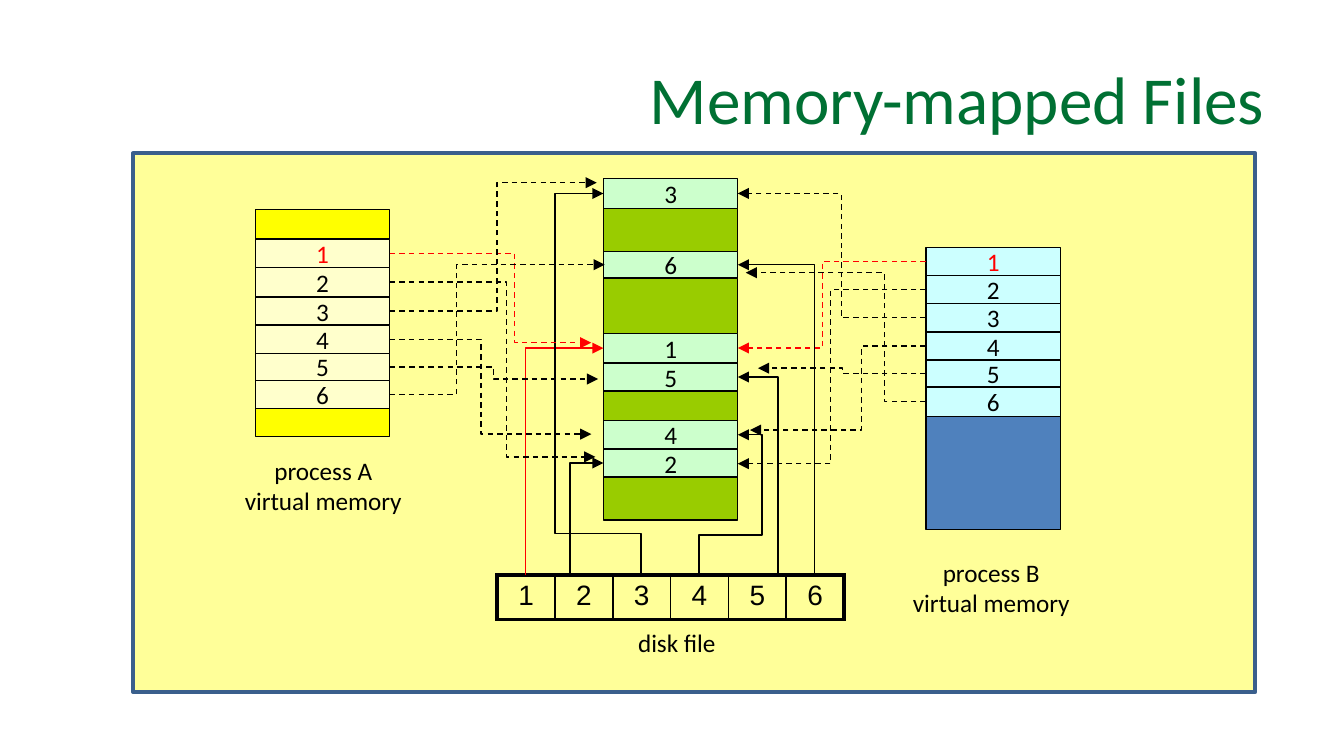
"""Build a slide on how two processes share a memory-mapped file."""
from pptx import Presentation
from pptx.dml.color import RGBColor
from pptx.enum.dml import MSO_LINE
from pptx.enum.shapes import MSO_CONNECTOR, MSO_SHAPE
from pptx.enum.text import MSO_ANCHOR, PP_ALIGN
from pptx.oxml.ns import qn
from pptx.util import Inches, Pt
from lxml.etree import SubElement

TITLE = "Memory-mapped Files"
HUES = {
    "title": "007033", "panel": "FFFF99", "edge": "3A5F8C", "ink": "000000",
    "red": "FF0000", "page_a": "FFFFCC", "rest_a": "FFFF00",
    "page_b": "CCFFFF", "rest_b": "4F81BD", "frame": "CCFFCC", "free": "99CC00",
}
WIDE = 1
STACKS = {
    "a": (1.9, 1.56, "page_a", "rest_a", [
        ("", 0.22), ("1", 0.21), ("2", 0.22), ("3", 0.21),
        ("4", 0.21), ("5", 0.2), ("6", 0.21), ("", 0.21)]),
    "b": (6.89, 1.84, "page_b", "rest_b", [
        ("1", 0.21), ("2", 0.21), ("3", 0.21), ("4", 0.21),
        ("5", 0.2), ("6", 0.22), ("", 0.84)]),
    "ram": (4.49, 1.33, "frame", "free", [
        ("3", 0.22), ("", 0.32), ("6", 0.2), ("", 0.41), ("1", 0.22), ("5", 0.21),
        ("", 0.22), ("4", 0.21), ("2", 0.21), ("", 0.32)]),
}
NOTES = [
    (("process A", "virtual memory"), 1.71, 3.34, 1.39, 0.56),
    (("process B", "virtual memory"), 6.68, 4.1, 1.39, 0.56),
    (("disk file",), 4.64, 4.62, 0.79, 0.33),
]
DISK = ["1", "2", "3", "4", "5", "6"]
DISK_X, DISK_Y, DISK_W, DISK_H = 3.7, 4.28, 0.43, 0.33
MAPS = {
    "a": [("1", 3.83, 4.4, 2.55), ("2", 3.77, 4.43, 3.4), ("3", 3.7, 4.44, 1.36),
          ("4", 3.58, 4.4, 3.23), ("5", 3.67, 4.45, 2.82), ("6", 3.4, 4.5, 1.97)],
    "b": [("1", 6.12, 5.49, 2.59), ("2", 6.18, 5.49, 3.45), ("3", 6.26, 5.49, 1.44),
          ("4", 6.41, 5.58, 3.2), ("5", 6.27, 5.64, 2.74), ("6", 6.58, 5.55, 2.03)],
}
LOADS = [("1", 0, 3.91, None), ("2", 0, 4.24, None), ("3", 0, 4.77, (4.13, 3.97)),
         ("4", 1, 5.2, (5.67, 3.98)), ("5", 1, 5.79, None), ("6", 1, 6.06, None)]


def hue(name):
    return RGBColor.from_string(HUES[name])


def style(para, size, name="ink", face="Calibri", align=PP_ALIGN.CENTER):
    para.alignment = align
    para.font.size, para.font.name = Pt(size), face
    para.font.color.rgb = hue(name)


def box(slide, area, fill, edge="ink", width=0.75):
    shape = slide.shapes.add_shape(MSO_SHAPE.RECTANGLE, *map(Inches, area))
    shape.shadow.inherit = False
    shape.fill.solid()
    shape.fill.fore_color.rgb = hue(fill)
    shape.line.color.rgb, shape.line.width = hue(edge), Pt(width)
    return shape


def stack(slide, key):
    left, top, page, rest, rows = STACKS[key]
    mids = {}
    for label, high in rows:
        cell = box(slide, (left, top, WIDE, high), page if label else rest)
        if label:
            mids[label] = top + high / 2
            frame = cell.text_frame
            frame.word_wrap, frame.vertical_anchor = False, MSO_ANCHOR.MIDDLE
            frame.text = label
            red = label == "1" and key != "ram"
            style(frame.paragraphs[0], 13.5, "red" if red else "ink")
        top += high
    return mids


def note(slide, lines, *area):
    frame = slide.shapes.add_textbox(*map(Inches, area)).text_frame
    frame.word_wrap = False
    frame.text = "\n".join(lines)
    for para in frame.paragraphs:
        style(para, 13.5)


def bend(slide, start, stop, name, kind, shares, tip, dash=False):
    line = slide.shapes.add_connector(MSO_CONNECTOR.ELBOW, *map(Inches, start + stop))
    props = line._element.spPr
    geom = props.find(qn("a:prstGeom"))
    geom.set("prst", f"bentConnector{kind}")
    guides = geom.find(qn("a:avLst"))
    if guides is None:
        guides = SubElement(geom, qn("a:avLst"))
    for num, share in enumerate(shares, 1):
        SubElement(guides, qn("a:gd"), name=f"adj{num}",
                   fmla=f"val {round(share * 100000)}")
    line.line.color.rgb, line.line.width = hue(name), Pt(0.75)
    if dash:
        line.line.dash_style = MSO_LINE.DASH
    SubElement(line.line._get_or_add_ln(), qn(f"a:{tip}"), type="triangle")
    SubElement(props, qn("a:effectLst"))


def disk(slide):
    count = len(DISK)
    table = slide.shapes.add_table(1, count, *map(Inches, (
        DISK_X, DISK_Y, DISK_W * count, DISK_H))).table
    table.first_row = table.horz_banding = False
    for col, label in enumerate(DISK):
        table.columns[col].width = Inches(DISK_W)
        cell = table.cell(0, col)
        cell.text = label
        cell.margin_left = cell.margin_right = Inches(0.07)
        cell.margin_top = cell.margin_bottom = Inches(0.04)
        style(cell.text_frame.paragraphs[0], 15, face="Arial")
        sides = {"lnL": 1 if col else 2.25, "lnR": 1 if col < count - 1 else 2.25,
                 "lnT": 2.25, "lnB": 2.25}
        props = cell._tc.get_or_add_tcPr()
        for side, width in sides.items():
            edge = SubElement(props, qn(f"a:{side}"), w=str(Pt(width)))
            fill = SubElement(edge, qn("a:solidFill"))
            SubElement(fill, qn("a:srgbClr"), val=HUES["ink"])
        cell.fill.background()


def main():
    deck = Presentation()
    deck.slide_width, deck.slide_height = Inches(10), Inches(10) * 9 // 16
    slide = deck.slides.add_slide(deck.slide_layouts[5])
    head = slide.shapes.title
    head.left, head.top, head.width, head.height = map(Inches, (0.49, 0.31, 9.02, 0.84))
    head.text_frame.text = TITLE
    head.text_frame.vertical_anchor = MSO_ANCHOR.MIDDLE
    style(head.text_frame.paragraphs[0], 36, "title", align=PP_ALIGN.RIGHT)

    box(slide, (0.99, 1.14, 8.35, 4.01), "panel", "edge", 2)
    mids = {key: stack(slide, key) for key in STACKS}
    disk(slide)
    for lines, *area in NOTES:
        note(slide, lines, *area)

    ram = STACKS["ram"][0]
    for label, side, foot, turn in LOADS:
        left, top = ram + side * WIDE, mids["ram"][label]
        shares = ()
        if turn:
            shares = ((turn[0] - left) / (foot - left), (turn[1] - top) / (DISK_Y - top))
        bend(slide, (left, top), (foot, DISK_Y), "red" if label == "1" else "ink",
             4 if turn else 2, shares, "headEnd")
    for key, routes in MAPS.items():
        left = STACKS[key][0] + (WIDE if key == "a" else 0)
        for label, turn, stop, end in routes:
            bend(slide, (left, mids[key][label]), (stop, end),
                 "red" if label == "1" else "ink", 3,
                 [(turn - left) / (stop - left)], "tailEnd", True)
    deck.save("out.pptx")


if __name__ == "__main__":
    main()
